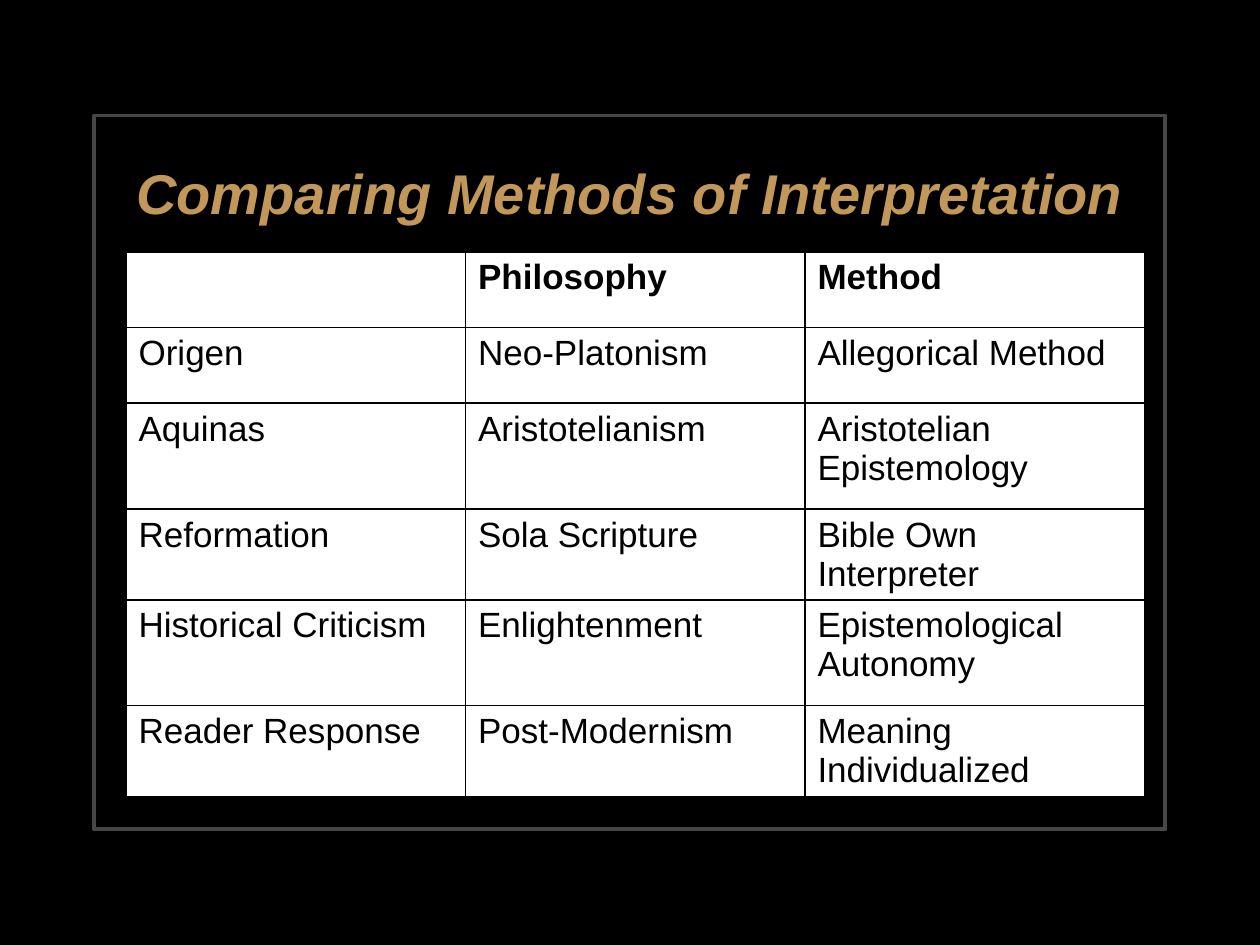
"""Build a slide with a table comparing methods of interpretation."""
from dataclasses import dataclass

from lxml import etree
from pptx import Presentation
from pptx.dml.color import RGBColor
from pptx.enum.shapes import MSO_SHAPE
from pptx.enum.text import MSO_ANCHOR, MSO_AUTO_SIZE, PP_ALIGN
from pptx.oxml.ns import qn
from pptx.util import Pt

RECTANGLE = MSO_SHAPE.RECTANGLE
MIDDLE = MSO_ANCHOR.MIDDLE
NO_AUTOFIT = MSO_AUTO_SIZE.NONE
CENTER = PP_ALIGN.CENTER
LEFT = PP_ALIGN.LEFT
TITLE_ONLY = 5


@dataclass(frozen=True)
class Theme:
    font: str = "Arial"
    background: str = "000000"
    frame: str = "474747"
    title: str = "C19859"
    ink: str = "000000"
    cell: str = "FFFFFF"
    title_size: float = 32
    body_size: float = 20
    frame_width: float = 2.25
    border_width: float = 1


@dataclass(frozen=True)
class Box:
    left: float
    top: float
    width: float
    height: float

    def lengths(self) -> tuple:
        return Pt(self.left), Pt(self.top), Pt(self.width), Pt(self.height)


@dataclass(frozen=True)
class Row:
    height: float
    school: str
    philosophy: str
    method: str
    bold: bool = False


THEME = Theme()
FRAME = Box(54, 66, 612, 408)
TITLE = Box(54, 65.5, 612, 88)
TABLE = Box(72, 144, 582, 311.2)
ROWS = (
    Row(43.2, "", "Philosophy", "Method", bold=True),
    Row(43.2, "Origen", "Neo-Platonism", "Allegorical Method"),
    Row(60.5, "Aquinas", "Aristotelianism", "Aristotelian Epistemology"),
    Row(51.9, "Reformation", "Sola Scripture", "Bible Own Interpreter"),
    Row(60.5, "Historical Criticism", "Enlightenment", "Epistemological Autonomy"),
    Row(51.9, "Reader Response", "Post-Modernism", "Meaning Individualized"),
)


def write_text(text_frame, text: str, *, size: float, color: str, bold: bool = False,
               italic: bool = False, alignment=LEFT) -> None:
    text_frame.word_wrap = True
    paragraph = text_frame.paragraphs[0]
    paragraph.alignment = alignment
    if not text:
        return
    run = paragraph.add_run()
    run.text = text
    font = run.font
    font.name = THEME.font
    font.size = Pt(size)
    font.bold = bold
    font.italic = italic
    font.color.rgb = RGBColor.from_string(color)


def draw_title(slide, text: str) -> None:
    title = slide.shapes.title
    title.left, title.top, title.width, title.height = TITLE.lengths()
    text_frame = title.text_frame
    text_frame.auto_size = NO_AUTOFIT
    text_frame.vertical_anchor = MIDDLE
    text_frame.margin_left = text_frame.margin_right = Pt(7.2)
    text_frame.margin_top = text_frame.margin_bottom = Pt(7.2)
    write_text(text_frame, text, size=THEME.title_size, color=THEME.title,
               bold=True, italic=True, alignment=CENTER)


def draw_frame(slide) -> None:
    frame = slide.shapes.add_shape(RECTANGLE, *FRAME.lengths())
    frame.shadow.inherit = False
    frame.fill.background()
    frame.line.color.rgb = RGBColor.from_string(THEME.frame)
    frame.line.width = Pt(THEME.frame_width)


def set_borders(cell) -> None:
    properties = cell._tc.get_or_add_tcPr()
    for side in ("a:lnL", "a:lnR", "a:lnT", "a:lnB"):
        line = etree.SubElement(properties, qn(side), w=str(Pt(THEME.border_width)))
        fill = etree.SubElement(line, qn("a:solidFill"))
        etree.SubElement(fill, qn("a:srgbClr"), val=THEME.ink)


def draw_table(slide, rows: tuple[Row, ...]) -> None:
    table = slide.shapes.add_table(len(rows), 3, *TABLE.lengths()).table
    table.horz_banding = False
    for column in table.columns:
        column.width = Pt(TABLE.width / 3)
    for table_row, row in zip(table.rows, rows):
        table_row.height = Pt(row.height)
        for cell, text in zip(table_row.cells, (row.school, row.philosophy, row.method)):
            set_borders(cell)
            cell.fill.solid()
            cell.fill.fore_color.rgb = RGBColor.from_string(THEME.cell)
            write_text(cell.text_frame, text, size=THEME.body_size,
                       color=THEME.ink, bold=row.bold)


def main() -> None:
    presentation = Presentation()
    presentation.slide_width, presentation.slide_height = Pt(720), Pt(540)
    slide = presentation.slides.add_slide(presentation.slide_layouts[TITLE_ONLY])
    slide.background.fill.solid()
    slide.background.fill.fore_color.rgb = RGBColor.from_string(THEME.background)
    draw_frame(slide)
    draw_title(slide, "Comparing Methods of Interpretation")
    draw_table(slide, ROWS)
    presentation.save("out.pptx")


if __name__ == "__main__":
    main()
